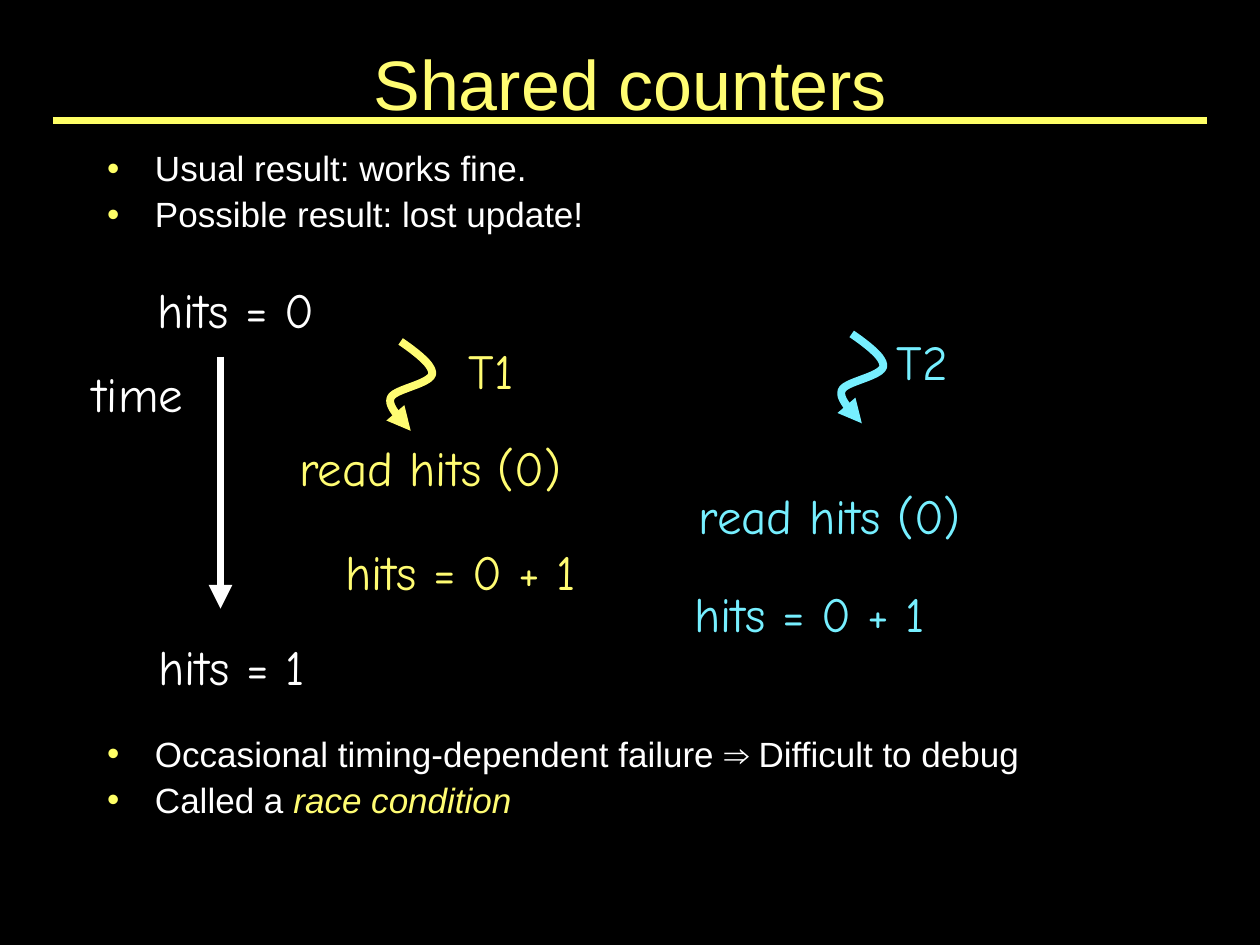
import pptx
import pptx.util
import pptx.dml.color
import pptx.enum.dml
import pptx.enum.shapes
import pptx.enum.text
import pptx.oxml.ns
import lxml.etree

Inches = pptx.util.Inches
Pt = pptx.util.Pt
qn = pptx.oxml.ns.qn
RGBColor = pptx.dml.color.RGBColor
PP_ALIGN = pptx.enum.text.PP_ALIGN
MSO_ANCHOR = pptx.enum.text.MSO_ANCHOR
MSO_AUTO_SIZE = pptx.enum.text.MSO_AUTO_SIZE

COLORS = {
    "background": "000000",
    "rule": "FFFF66",
    "yellow": "FFFC72",
    "cyan": "76EFFF",
    "white": "FFFFFF",
}
TITLE_FONT = {"name": "Arial", "size": Pt(40)}
BODY_FONT = {"name": "Arial", "size": Pt(20)}
LABEL_FONT = {"name": "Comic Neue", "size": Pt(28)}


def add_text(paragraph, text, font_values, color):
    run = paragraph.add_run()
    run.text = text
    for name, value in font_values.items():
        setattr(run.font, name, value)
    run.font.color.rgb = RGBColor.from_string(COLORS[color])


def style_line(shape, color, width, arrow=True):
    shape.line.width = Pt(width)
    shape.line.color.rgb = RGBColor.from_string(COLORS[color])
    if arrow:
        line = shape.line._get_or_add_ln()
        lxml.etree.SubElement(line, qn("a:round"))
        lxml.etree.SubElement(line, qn("a:tailEnd"), type="triangle")
    lxml.etree.SubElement(shape._element.spPr, qn("a:effectLst"))


presentation = pptx.Presentation()
presentation.slide_width = Inches(10)
presentation.slide_height = Inches(7.5)
slide = presentation.slides.add_slide(presentation.slide_layouts[1])
slide.background.fill.solid()
slide.background.fill.fore_color.rgb = RGBColor.from_string(COLORS["background"])

title = slide.shapes.title
body = slide.placeholders[1]
for shape, top, height, anchor in [
    (title, -0.21, 1.25, MSO_ANCHOR.BOTTOM),
    (body, 1.15, 6.01, MSO_ANCHOR.TOP),
]:
    frame_values = {"left": Inches(0.75), "top": Inches(top), "width": Inches(8.5), "height": Inches(height)}
    for name, value in frame_values.items():
        setattr(shape, name, value)
    shape.text_frame.vertical_anchor = anchor
    shape.text_frame.auto_size = MSO_AUTO_SIZE.NONE

title.text_frame.paragraphs[0].alignment = PP_ALIGN.CENTER
add_text(title.text_frame.paragraphs[0], "Shared counters", TITLE_FONT, "yellow")

bullets = [
    ("Usual result: works fine.", "", 4.9),
    ("Possible result: lost update!", "", 4.9),
    ("Occasional timing-dependent failure ⇒ Difficult to debug", "", 286.5),
    ("Called a ", "race condition", 4.9),
]
for index, (text, emphasis, space_before) in enumerate(bullets):
    paragraph = body.text_frame.paragraphs[0] if index == 0 else body.text_frame.add_paragraph()
    paragraph_values = {"line_spacing": 0.9, "space_before": Pt(space_before), "alignment": PP_ALIGN.LEFT}
    for name, value in paragraph_values.items():
        setattr(paragraph, name, value)
    properties = paragraph._p.get_or_add_pPr()
    properties.set("marL", str(Inches(0.38)))
    properties.set("indent", str(Inches(-0.38)))
    bullet_color = lxml.etree.SubElement(properties, qn("a:buClr"))
    lxml.etree.SubElement(bullet_color, qn("a:srgbClr"), val=COLORS["rule"])
    lxml.etree.SubElement(properties, qn("a:buChar"), char="•")
    add_text(paragraph, text, BODY_FONT, "white")
    if emphasis:
        add_text(paragraph, emphasis, {**BODY_FONT, "italic": True}, "yellow")

for start_x, start_y, end_x, end_y, color, width, arrow in [
    (0.42, 0.96, 9.58, 0.96, "rule", 4, False),
    (1.75, 2.83, 1.75, 4.83, "white", 4.5, True),
]:
    connector = slide.shapes.add_connector(
        pptx.enum.shapes.MSO_CONNECTOR.STRAIGHT,
        Inches(start_x), Inches(start_y), Inches(end_x), Inches(end_y),
    )
    style_line(connector, color, width, arrow)

labels = [
    ("hits = 0", 1.08, 2.17, 1.58, "white"),
    ("time", 0.59, 2.83, 1.01, "white"),
    ("hits = 1", 1.08, 5, 1.51, "white"),
    ("T1", 3.58, 2.65, 0.64, "yellow"),
    ("read hits (0)", 2.17, 3.42, 2.49, "yellow"),
    ("hits = 0 + 1", 2.57, 4.25, 2.17, "yellow"),
    ("T2", 6.97, 2.58, 0.7, "cyan"),
    ("read hits (0)", 5.34, 3.8, 2.49, "cyan"),
    ("hits = 0 + 1", 5.34, 4.58, 2.17, "cyan"),
]
for text, left, top, width, color in labels:
    label = slide.shapes.add_textbox(Inches(left), Inches(top), Inches(width), Inches(0.57))
    label_values = {
        "word_wrap": False,
        "auto_size": MSO_AUTO_SIZE.SHAPE_TO_FIT_TEXT,
        "vertical_anchor": MSO_ANCHOR.MIDDLE,
    }
    for name, value in label_values.items():
        setattr(label.text_frame, name, value)
    label.text_frame.paragraphs[0].alignment = PP_ALIGN.CENTER
    add_text(label.text_frame.paragraphs[0], text, LABEL_FONT, color)

thread_curves = [
    [(0.11, 0), (0.24, 0.09), (0.37, 0.19), (0.36, 0.26)],
    [(0.36, 0.26), (0.34, 0.34), (0.05, 0.38), (0.03, 0.45)],
    [(0.03, 0.45), (0, 0.53), (0.16, 0.66), (0.19, 0.71)],
]
STEPS = 12
for left, top, color in [(3.07, 2.71, "yellow"), (6.65, 2.65, "cyan")]:
    points = [(Inches(left + 0.11), Inches(top))]
    for curve in thread_curves:
        for step in range(1, STEPS + 1):
            t = step / STEPS
            weights = [(1 - t) ** 3, 3 * t * (1 - t) ** 2, 3 * t ** 2 * (1 - t), t ** 3]
            x = sum(weight * point[0] for weight, point in zip(weights, curve))
            y = sum(weight * point[1] for weight, point in zip(weights, curve))
            points.append((Inches(left + x), Inches(top + y)))
    builder = slide.shapes.build_freeform(*points[0])
    builder.add_line_segments(points[1:], close=False)
    thread = builder.convert_to_shape()
    thread.fill.background()
    style_line(thread, color, 4.5)

presentation.save("out.pptx")
